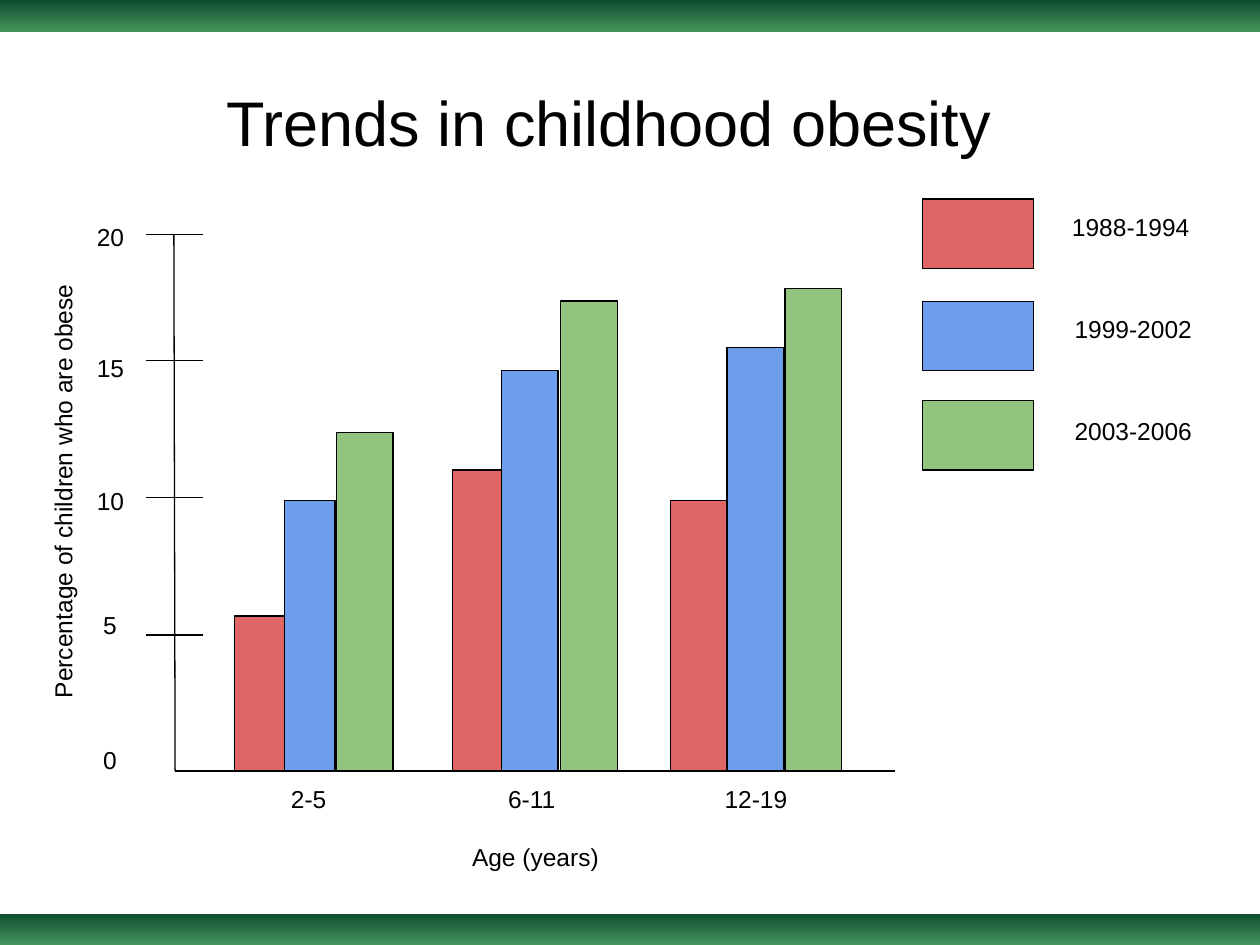
from pptx import Presentation
from pptx.dml.color import RGBColor
from pptx.enum.shapes import MSO_CONNECTOR as Connector, MSO_SHAPE as Shape
from pptx.enum.text import PP_ALIGN as Align
from pptx.oxml.ns import qn
from pptx.util import Inches, Pt
from lxml.etree import SubElement

COLUMNS, ROWS = 100, 75
INK = "000000"
AXIS_COLUMN, BASE_ROW = 13.9, 61.2


def color(hex_code):
    return RGBColor.from_string(hex_code)


class ObesitySlide:
    font = "Arial"
    text_size = 14
    line_width = 0.75
    margin = 0.1

    def __init__(self, deck):
        self.slide = deck.slides.add_slide(deck.slide_layouts[6])
        self.column = deck.slide_width / COLUMNS
        self.row = deck.slide_height / ROWS

    def place(self, left, top, width, height):
        return (round(left * self.column), round(top * self.row),
                round(width * self.column), round(height * self.row))

    def rect(self, *area):
        rect = self.slide.shapes.add_shape(Shape.RECTANGLE, *self.place(*area))
        rect.shadow.inherit = False
        return rect

    def band(self, top, start, end):
        band = self.rect(0, top, COLUMNS, 2.5)
        band.line.fill.background()
        band.fill.gradient()
        band.fill.gradient_angle = 270
        for stop, shade in zip(band.fill.gradient_stops, (start, end)):
            stop.color.rgb = color(shade)

    def block(self, area, fill):
        block = self.rect(*area)
        block.fill.solid()
        block.fill.fore_color.rgb = color(fill)
        block.line.color.rgb = color(INK)
        block.line.width = Pt(self.line_width)

    def rule(self, left, top, right, bottom):
        rule = self.slide.shapes.add_connector(
            Connector.STRAIGHT, *self.place(left, top, right, bottom))
        rule.line.color.rgb = color(INK)
        rule.line.width = Pt(self.line_width)
        SubElement(rule._element.spPr, qn("a:effectLst"))

    def text(self, words, area, size=text_size, align=Align.LEFT,
             rotation=0, top_margin=margin):
        box = self.slide.shapes.add_textbox(*self.place(*area))
        box.rotation = rotation
        frame = box.text_frame
        frame.word_wrap = True
        frame.margin_left = frame.margin_right = Inches(self.margin)
        frame.margin_bottom = Inches(self.margin)
        frame.margin_top = Inches(top_margin)
        paragraph = frame.paragraphs[0]
        paragraph.text = words
        paragraph.alignment = align
        paragraph.font.name = self.font
        paragraph.font.size = Pt(size)
        paragraph.font.color.rgb = color(INK)


def main():
    deck = Presentation()
    deck.slide_width, deck.slide_height = Inches(10), Inches(7.5)
    page = ObesitySlide(deck)

    for band_top in (0, 72.5):
        page.band(band_top, "0F4D2F", "44945B")
    page.text("Trends in childhood obesity", (17, 5, 74.3, 10.5),
              size=36, top_margin=0.16)

    page.rule(13.8, 18.6, AXIS_COLUMN, BASE_ROW)
    page.rule(AXIS_COLUMN, BASE_ROW, 71, BASE_ROW)
    for tick_row in (18.6, 28.6, 39.5, 50.4):
        page.rule(11.6, tick_row, 16.1, tick_row)
    for value, left, top in (("0", 7.2, 58.1), ("5", 7.2, 47.4),
                             ("10", 6.7, 37.6), ("15", 6.7, 27),
                             ("20", 6.7, 16.6)):
        page.text(value, (left, top, 7.1, 4.5))
    page.text("Percentage of children who are obese", (-19, 30.2, 48, 4.4),
              rotation=270)
    page.text("Age (years)", (33.1, 65.8, 18.8, 6.7), align=Align.CENTER)

    periods = (
        ("1988-1994", "E06666", 15.8, 84.1, 15.8),
        ("1999-2002", "6D9EEB", 23.9, 84.3, 23.9),
        ("2003-2006", "93C47D", 31.8, 84.3, 32),
    )
    age_groups = (
        ("2-5", 24.5, ((18.6, 4, 48.9), (22.6, 4, 39.7), (26.7, 4.5, 34.3))),
        ("6-11", 42.2, ((35.9, 4, 37.3), (39.8, 4.5, 29.4), (44.5, 4.5, 23.9))),
        ("12-19", 60, ((53.2, 4.5, 39.7), (57.7, 4.5, 27.6), (62.3, 4.5, 22.9))),
    )
    for ages, center, bars in age_groups:
        page.text(ages, (center - 5.4, BASE_ROW, 10.8, 4.5), align=Align.CENTER)
        for (left, width, top), (_, fill, *_) in zip(bars, periods):
            page.block((left, top, width, BASE_ROW - top), fill)

    for period, fill, key_top, label_left, label_top in periods:
        page.block((73.2, key_top, 8.8, 5.5), fill)
        page.text(period, (label_left, label_top, 13.4, 5.5))

    deck.save("out.pptx")


if __name__ == "__main__":
    main()
